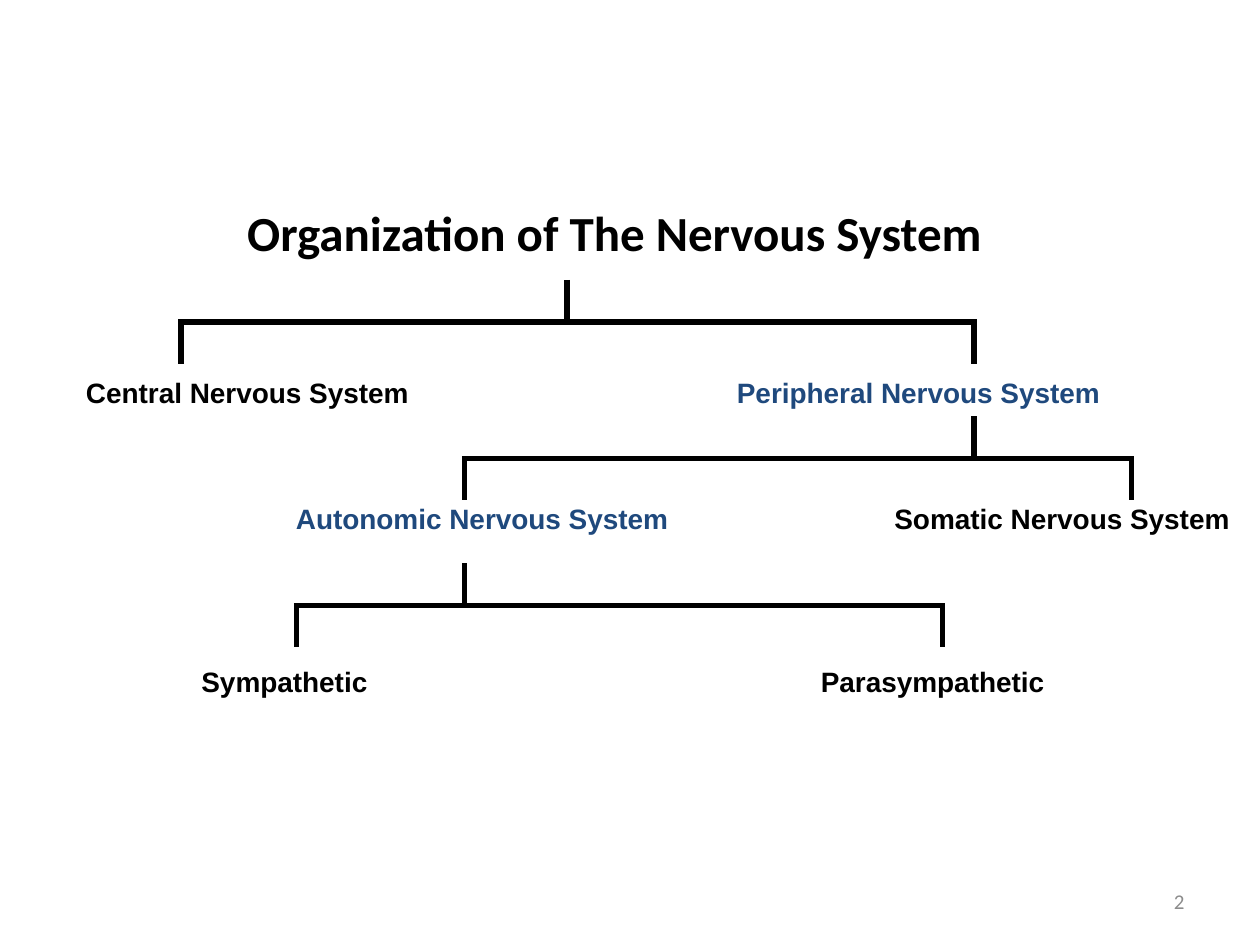
from lxml.etree import SubElement
from pptx import Presentation
from pptx.dml.color import RGBColor
from pptx.enum.shapes import MSO_CONNECTOR
from pptx.enum.text import MSO_ANCHOR, PP_ALIGN
from pptx.oxml.ns import qn
from pptx.util import Pt

BLACK = RGBColor(0x00, 0x00, 0x00)
BLUE = RGBColor(0x1F, 0x49, 0x7D)
GRAY = RGBColor(0x8C, 0x8C, 0x8C)
LINE_WIDTH = 3
BRANCH = 24

LABELS = [
    ("Central Nervous System", 42, 211, 228, BLACK),
    ("Peripheral Nervous System", 414, 211, 228, BLUE),
    ("Somatic Nervous System", 504, 283, 228, BLACK),
    ("Autonomic Nervous System", 162, 283, 228, BLUE),
    ("Sympathetic", 108, 376, 120, BLACK),
    ("Parasympathetic", 462, 376, 150, BLACK),
]
FORKS = [
    (102, 160, 456, 324),
    (264, 238, 384, 556.5),
    (168, 322, 372, 265.5),
]


def add_text(s, text, left, top, width, height, size=16, font="Arial", color=BLACK,
             bold=True, align=PP_ALIGN.LEFT, anchor=MSO_ANCHOR.TOP):
    """Place one line of formatted text in a box."""
    tf = s.shapes.add_textbox(Pt(left), Pt(top), Pt(width), Pt(height)).text_frame
    tf.word_wrap = True
    tf.vertical_anchor = anchor
    p = tf.paragraphs[0]
    p.alignment = align
    r = p.add_run()
    r.text = text
    r.font.size = Pt(size)
    r.font.name = font
    r.font.bold = bold
    r.font.color.rgb = color


def add_line(s, x1, y1, x2, y2):
    """Draw a straight black line without a shadow."""
    line = s.shapes.add_connector(MSO_CONNECTOR.STRAIGHT, Pt(x1), Pt(y1), Pt(x2), Pt(y2))
    line.line.color.rgb = BLACK
    line.line.width = Pt(LINE_WIDTH)
    SubElement(line._element.spPr, qn("a:effectLst"))


def add_fork(s, left, top, width, stem_x):
    """Draw a stem, a bar and a drop flush with each end of the bar."""
    bar_y = top + BRANCH
    right = left + width
    add_line(s, stem_x, top, stem_x, bar_y)
    add_line(s, left, bar_y, right, bar_y)
    for x in (left + LINE_WIDTH / 2, right - LINE_WIDTH / 2):
        add_line(s, x, bar_y, x, bar_y + BRANCH)


def main():
    """Build the nervous system tree and save it."""
    prs = Presentation()
    prs.slide_width, prs.slide_height = Pt(720), Pt(540)
    s = prs.slides.add_slide(prs.slide_layouts[6])
    add_text(s, "Organization of The Nervous System", 54, 112, 594, 60,
             size=28, font="Calibri", align=PP_ALIGN.CENTER)
    for fork in FORKS:
        add_fork(s, *fork)
    for text, left, top, width, color in LABELS:
        add_text(s, text, left, top, width, 26.5, color=color)
    add_text(s, "2", 516, 500.5, 168, 28.75, size=12, font="Calibri", color=GRAY,
             bold=False, align=PP_ALIGN.RIGHT, anchor=MSO_ANCHOR.MIDDLE)
    prs.save("out.pptx")


if __name__ == "__main__":
    main()
